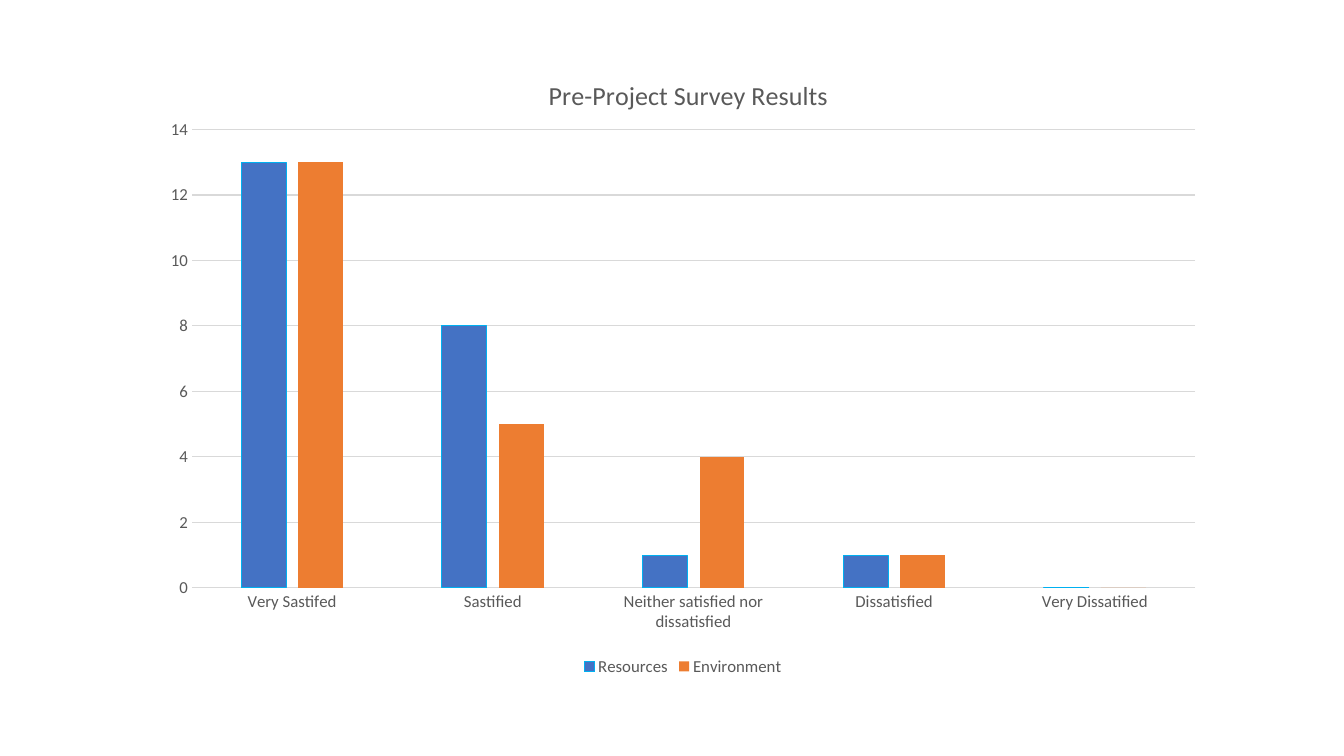
from lxml import etree
from pptx import Presentation
from pptx import util as u
from pptx.chart.data import CategoryChartData
from pptx.dml.color import RGBColor
from pptx.enum import chart as kinds
from pptx.oxml import parse_xml
from pptx.oxml.ns import nsdecls, qn

GREY, PALE = "595959", "D9D9D9"
LABEL = {"name": "Calibri", "size": u.Pt(12), "bold": False}
TITLE = {**LABEL, "size": u.Pt(18.6)}
CATEGORIES = ["Very Sastifed", "Sastified", "Neither satisfied nor dissatisfied",
              "Dissatisfied", "Very Dissatified"]
# name, values, fill, outline
SERIES = [("Resources", (13, 8, 1, 1, 0), "4472C4", "00B0F0"),
          ("Environment", (13, 5, 4, 1, 0), "ED7D31", None)]


def colour(hex_code):
    return RGBColor.from_string(hex_code)


def apply(target, values):
    for name, value in values.items():
        setattr(target, name, value)


def style_font(font, values):
    apply(font, values)
    font.color.rgb = colour(GREY)


def style_line(line, hex_code):
    """Draw a thin line, or none when there is no colour."""
    if hex_code is None:
        line.fill.background()
        return
    line.color.rgb = colour(hex_code)
    line.width = u.Pt(0.75)


def place(element, after, **fractions):
    """Fix a chart part at fractions of the chart's size."""
    for old in element.findall(qn("c:layout")):
        element.remove(old)
    layout = parse_xml(f"<c:layout {nsdecls('c')}><c:manualLayout/></c:layout>")
    settings = {"xMode": "edge", "yMode": "edge", **fractions}
    if "w" in fractions:
        settings = {"layoutTarget": "inner", **settings}
    for name, value in settings.items():
        etree.SubElement(layout[0], qn(f"c:{name}")).set("val", str(value))
    if after is None:
        element.insert(0, layout)
    else:
        after.addnext(layout)


def style_title(chart, wording):
    chart.has_title = True
    title = chart.chart_title
    title.include_in_layout = False
    para = title.text_frame.paragraphs[0]
    span = para.add_run()
    span.text = wording
    style_font(span.font, TITLE)
    element = title._element
    place(element, element.find(qn("c:tx")), x=0.37, y=0.04)


def style_axes(chart):
    for axis, line in ((chart.category_axis, PALE), (chart.value_axis, None)):
        apply(axis, {"major_tick_mark": kinds.XL_TICK_MARK.NONE,
                     "minor_tick_mark": kinds.XL_TICK_MARK.NONE})
        style_font(axis.tick_labels.font, LABEL)
        style_line(axis.format.line, line)
    apply(chart.value_axis, {"minimum_scale": 0, "maximum_scale": 14,
                             "major_unit": 2, "has_major_gridlines": True})
    style_line(chart.value_axis.major_gridlines.format.line, PALE)


def style_columns(chart):
    plot = chart.plots[0]
    apply(plot, {"gap_width": 219, "overlap": -27, "vary_by_categories": False})
    for series, (_, _, fill, outline) in zip(plot.series, SERIES):
        series.format.fill.solid()
        series.format.fill.fore_color.rgb = colour(fill)
        style_line(series.format.line, outline)


def style_legend(chart):
    chart.has_legend = True
    apply(chart.legend, {"position": kinds.XL_LEGEND_POSITION.BOTTOM,
                         "include_in_layout": False})
    style_font(chart.legend.font, LABEL)


def add_survey_chart(page):
    data = CategoryChartData()
    data.categories = CATEGORIES
    for name, values, _, _ in SERIES:
        data.add_series(name, values)
    frame = page.shapes.add_chart(
        kinds.XL_CHART_TYPE.COLUMN_CLUSTERED,
        u.Pt(106.5), u.Pt(33.8), u.Pt(762.5), u.Pt(452.2), data)
    chart = frame.chart
    chart.font.name = "Calibri"
    chart.font.size = u.Pt(10)
    style_title(chart, "Pre-Project Survey Results")
    style_axes(chart)
    style_columns(chart)
    style_legend(chart)
    place(chart._chartSpace.chart.plotArea, None, x=0.04, y=0.13, w=0.94, h=0.724)


def main():
    deck = Presentation()
    apply(deck, {"slide_width": u.Pt(960), "slide_height": u.Pt(540)})
    page = deck.slides.add_slide(deck.slide_layouts[6])
    add_survey_chart(page)
    deck.save("out.pptx")


if __name__ == "__main__":
    main()
